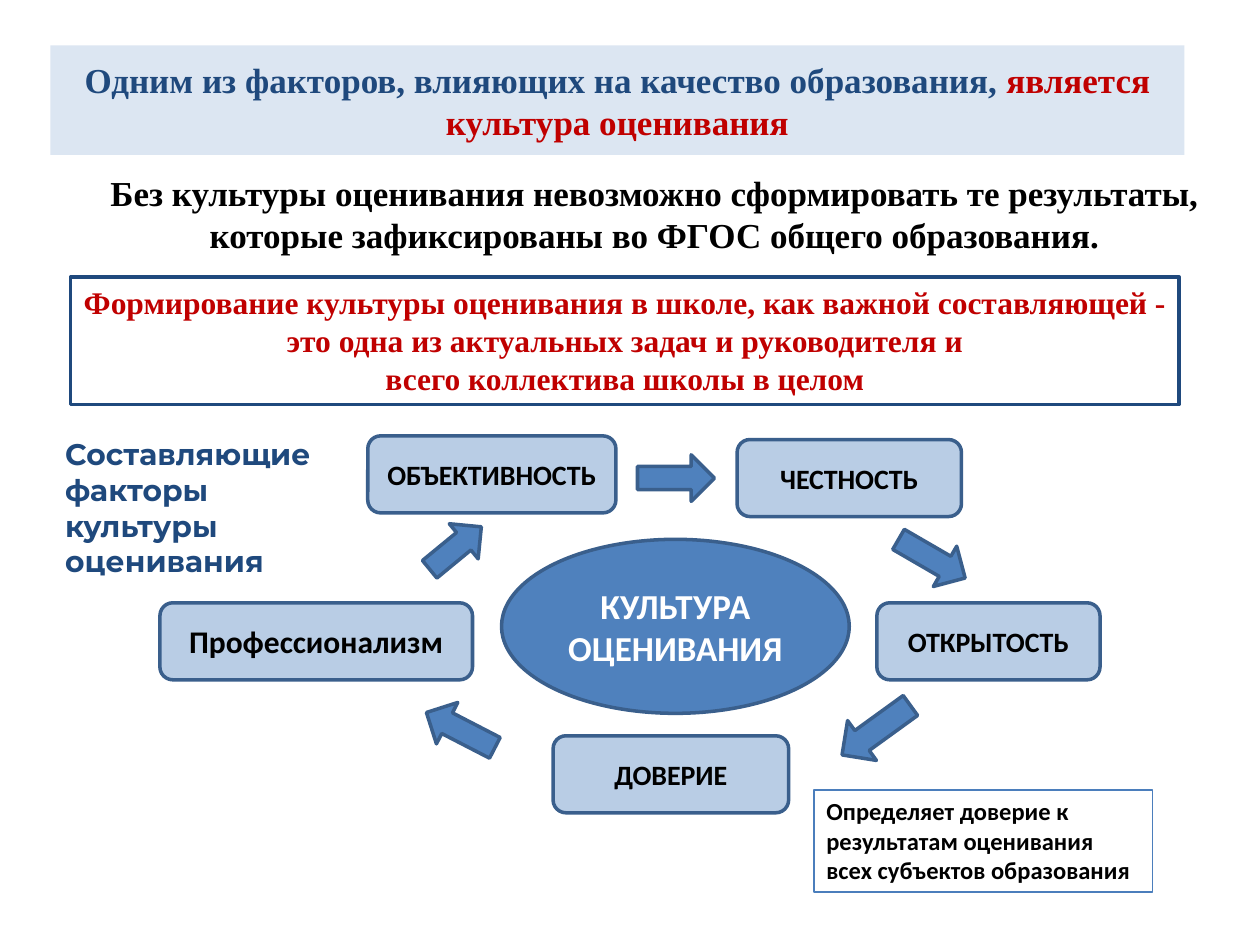
from pptx import Presentation
from pptx.dml.color import RGBColor
from pptx.enum.shapes import MSO_SHAPE
from pptx.enum.text import MSO_ANCHOR, MSO_AUTO_SIZE, PP_ALIGN
from pptx.util import Pt

RECT = MSO_SHAPE.RECTANGLE
ROUND = MSO_SHAPE.ROUNDED_RECTANGLE
OVAL = MSO_SHAPE.OVAL
ARROW = MSO_SHAPE.RIGHT_ARROW
LEFT, MID = PP_ALIGN.LEFT, PP_ALIGN.CENTER
TOP, CENTER = MSO_ANCHOR.TOP, MSO_ANCHOR.MIDDLE
GROW = MSO_AUTO_SIZE.SHAPE_TO_FIT_TEXT

HUES = {
    "band": "DCE6F2", "navy": "1F497D", "red": "C00000", "blue": "4F81BD",
    "edge": "3A5F8C", "pale": "B9CDE5", "thin": "4B7EBC",
    "black": "000000", "white": "FFFFFF",
}
SERIF, SANS, HEAD = "Times New Roman", "Calibri", "Montserrat"


def hue(name):
    return RGBColor.from_string(HUES[name])


def write(shape, paras, font=SANS, size=16, color="black", align=MID,
          anchor=CENTER, after=0, grow=False):
    frame = shape.text_frame
    frame.word_wrap = True
    frame.vertical_anchor = anchor
    if grow:
        frame.auto_size = GROW
    for i, runs in enumerate(paras):
        para = frame.add_paragraph() if i else frame.paragraphs[0]
        para.alignment = align
        para.space_after = Pt(after)
        for part in runs:
            text, tone = part if isinstance(part, tuple) else (part, color)
            run = para.add_run()
            run.text = text
            run.font.name = font
            run.font.size = Pt(size)
            run.font.bold = True
            run.font.color.rgb = hue(tone)


class Deck:
    def __init__(self, wide, high):
        self.show = Presentation()
        self.show.slide_width, self.show.slide_height = Pt(wide), Pt(high)
        self.slide = self.show.slides.add_slide(self.show.slide_layouts[6])

    def shape(self, kind, spot, fill=None, line=None, width=2):
        item = self.slide.shapes.add_shape(kind, *map(Pt, spot))
        item.shadow.inherit = False
        if fill:
            item.fill.solid()
            item.fill.fore_color.rgb = hue(fill)
        else:
            item.fill.background()
        if line:
            item.line.color.rgb = hue(line)
            item.line.width = Pt(width)
        else:
            item.line.fill.background()
        return item

    def panel(self, spot, paras, fill=None, line=None, width=2, **style):
        write(self.shape(RECT, spot, fill, line, width), paras, **style)

    def label(self, spot, paras, **style):
        box = self.slide.shapes.add_textbox(*map(Pt, spot))
        write(box, paras, anchor=TOP, grow=True, **style)

    def node(self, spot, text, kind=ROUND, fill="pale", **style):
        write(self.shape(kind, spot, fill, "edge"), [[text]], **style)

    def arrow(self, spot, turn):
        self.shape(ARROW, spot, "blue", "edge").rotation = turn


def main():
    deck = Deck(720, 540)
    deck.panel((28.8, 26, 648, 62.6), [[
        "Одним из факторов, влияющих на качество образования, ",
        ("является культура оценивания", "red"),
    ]], fill="band", font=SERIF, size=20, color="navy")

    deck.node((286.6, 308.2, 198.7, 99.4), "КУЛЬТУРА ОЦЕНИВАНИЯ",
              kind=OVAL, fill="blue", size=20, color="white")
    nodes = [
        ("ЧЕСТНОСТЬ", 421.2, 251.2, 128.2, 16),
        ("ОТКРЫТОСТЬ", 501.1, 344.5, 127.5, 16),
        ("ДОВЕРИЕ", 316.1, 420.5, 134.6, 16),
        ("Профессионализм", 91.4, 344.5, 178.6, 18),
        ("ОБЪЕКТИВНОСТЬ", 210.2, 249.1, 141.8, 16),
    ]
    for text, left, top, wide, size in nodes:
        deck.node((left, top, wide, 44), text, size=size)

    arrows = [
        (364.3, 259.9, 44, 26.6, 0),
        (510.5, 306, 44, 26.6, 30.1),
        (476.6, 403.2, 48.2, 28.1, 144.1),
        (241.2, 403.9, 44, 26.6, 207.3),
        (241.2, 300.2, 38.2, 26, 320.6),
    ]
    for *spot, turn in arrows:
        deck.arrow(spot, turn)

    deck.label((47.5, 94.3, 653, 55.4), [[
        "Без культуры оценивания невозможно сформировать те результаты, "
        "которые зафиксированы во ФГОС общего образования.",
    ]], font=SERIF, size=20, after=6)
    deck.label((30.2, 245.5, 171.4, 90),
               [["Составляющие факторы"], ["культуры оценивания"]],
               font=HEAD, size=17, color="navy", align=LEFT)
    deck.panel((465.1, 451.4, 193.7, 58.3), [[
        "Определяет доверие к результатам оценивания "
        "всех субъектов образования",
    ]], line="thin", width=0.75, size=14, align=LEFT, anchor=TOP, grow=True)
    deck.panel((40.3, 158.4, 633.6, 72.7), [
        ["Формирование культуры оценивания в школе, как важной составляющей - "
         "это одна из актуальных задач и руководителя и"],
        ["всего коллектива школы в целом"],
    ], line="navy", font=SERIF, size=18, color="red", anchor=TOP, grow=True)
    deck.show.save("out.pptx")


if __name__ == "__main__":
    main()
